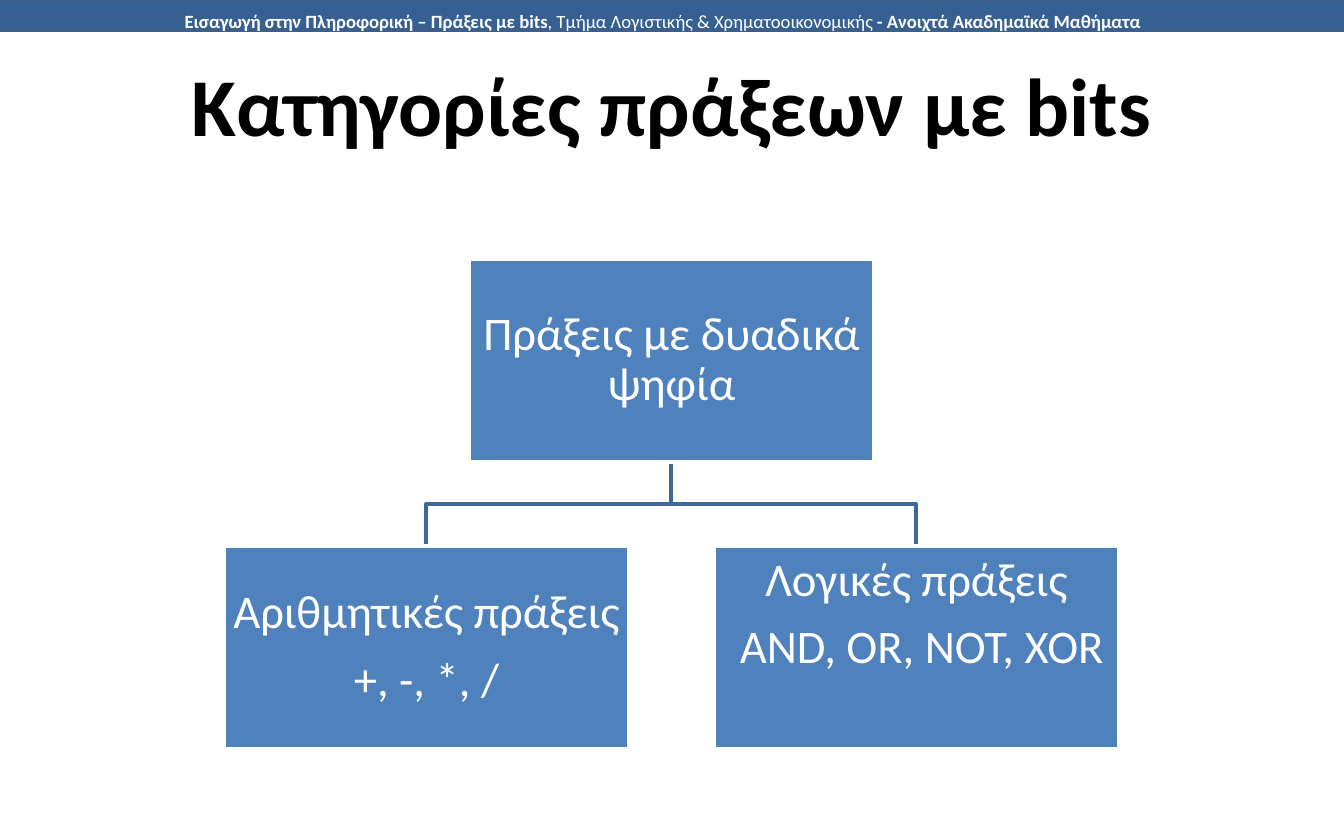
"""Build a slide that shows the categories of bit operations as a small tree."""
import pptx
import pptx.dml.color
import pptx.enum.shapes
import pptx.enum.text
import pptx.util

EMU_PER_PX = 914400 / 134.4
MIDDLE = pptx.enum.text.MSO_ANCHOR.MIDDLE
TOP = pptx.enum.text.MSO_ANCHOR.TOP
RECTANGLE = pptx.enum.shapes.MSO_SHAPE.RECTANGLE


def px(length):
    return pptx.util.Emu(round(length * EMU_PER_PX))


def paint(color_format, color):
    color_format.rgb = pptx.dml.color.RGBColor.from_string(color)


presentation = pptx.Presentation()
presentation.slide_width = px(1344)
presentation.slide_height = px(840)
slide = presentation.slides.add_slide(presentation.slide_layouts[6])
shapes = slide.shapes

banner = shapes.add_shape(RECTANGLE, px(0), px(1), px(1344), px(29))
banner_text = shapes.add_textbox(px(38), px(-8), px(1249), px(47))
title = shapes.add_textbox(px(67), px(34), px(1210), px(140))

box_width, box_height = 405, 203
root_left, root_top, child_top = 469, 259, 546
root_center, root_bottom = root_left + box_width // 2, root_top + box_height
child_offset = 245
branch_y = (root_bottom + child_top) // 2
branches = []
for direction in (1, -1):
    child_x = root_center + direction * child_offset
    builder = shapes.build_freeform(root_center, root_bottom, scale=EMU_PER_PX)
    builder.add_line_segments(
        [(root_center, branch_y), (child_x, branch_y), (child_x, child_top)], close=False
    )
    branch = builder.convert_to_shape()
    branch.fill.background()
    branches.append(branch)

nodes = [
    (root_left, root_top, 3, ["Πράξεις με δυαδικά ψηφία"]),
    (root_left - child_offset, child_top, 3, ["Αριθμητικές πράξεις", "+, -, *, /"]),
    (root_left + child_offset, child_top, 69, ["Λογικές πράξεις", " AND, OR, NOT, XOR"]),
]
boxes = [
    shapes.add_shape(RECTANGLE, px(left), px(top), px(box_width), px(box_height))
    for left, top, bottom_inset, lines in nodes
]

for shape, color in [(banner, "376092")] + [(box, "4F81BD") for box in boxes]:
    shape.fill.solid()
    paint(shape.fill.fore_color, color)

outlines = [(banner, "3A5F8C")]
outlines += [(branch, "3F6797") for branch in branches]
outlines += [(box, "FFFFFF") for box in boxes]
for shape, color in outlines:
    shape.shadow.inherit = False
    shape.line.width = pptx.util.Pt(2)
    paint(shape.line.color, color)

banner_runs = [
    ("Εισαγωγή στην Πληροφορική – Πράξεις με bits", True),
    (", Τμήμα Λογιστικής & Χρηματοοικονομικής ", False),
    ("- Ανοιχτά Ακαδημαϊκά Μαθήματα", True),
]
texts = [
    (banner_text, [banner_runs], 10, "FFFFFF", TOP, (13, 7, 13, 7), {"line_spacing": 1.5}),
    (title, [[("Κατηγορίες πράξεων με bits", True)]], 44, "000000", MIDDLE, (13, 7, 13, 7), {}),
]
node_format = {"line_spacing": 0.9, "space_after": pptx.util.Pt(9)}
for box, (left, top, bottom_inset, lines) in zip(boxes, nodes):
    paragraphs = [[(line, False)] for line in lines]
    texts.append((box, paragraphs, 25, "FFFFFF", MIDDLE, (3, 3, 3, bottom_inset), node_format))

for shape, paragraphs, size, color, anchor, insets, paragraph_format in texts:
    frame = shape.text_frame
    frame.word_wrap = True
    frame.vertical_anchor = anchor
    for side, inset in zip(("left", "top", "right", "bottom"), insets):
        setattr(frame, f"margin_{side}", px(inset))
    for index, runs in enumerate(paragraphs):
        paragraph = frame.add_paragraph() if index else frame.paragraphs[0]
        paragraph.alignment = pptx.enum.text.PP_ALIGN.CENTER
        for name, value in paragraph_format.items():
            setattr(paragraph, name, value)
        for text, bold in runs:
            run = paragraph.add_run()
            run.text = text
            font_format = {"name": "Calibri", "size": pptx.util.Pt(size), "bold": bold}
            for name, value in font_format.items():
                setattr(run.font, name, value)
            paint(run.font.color, color)

presentation.save("out.pptx")
